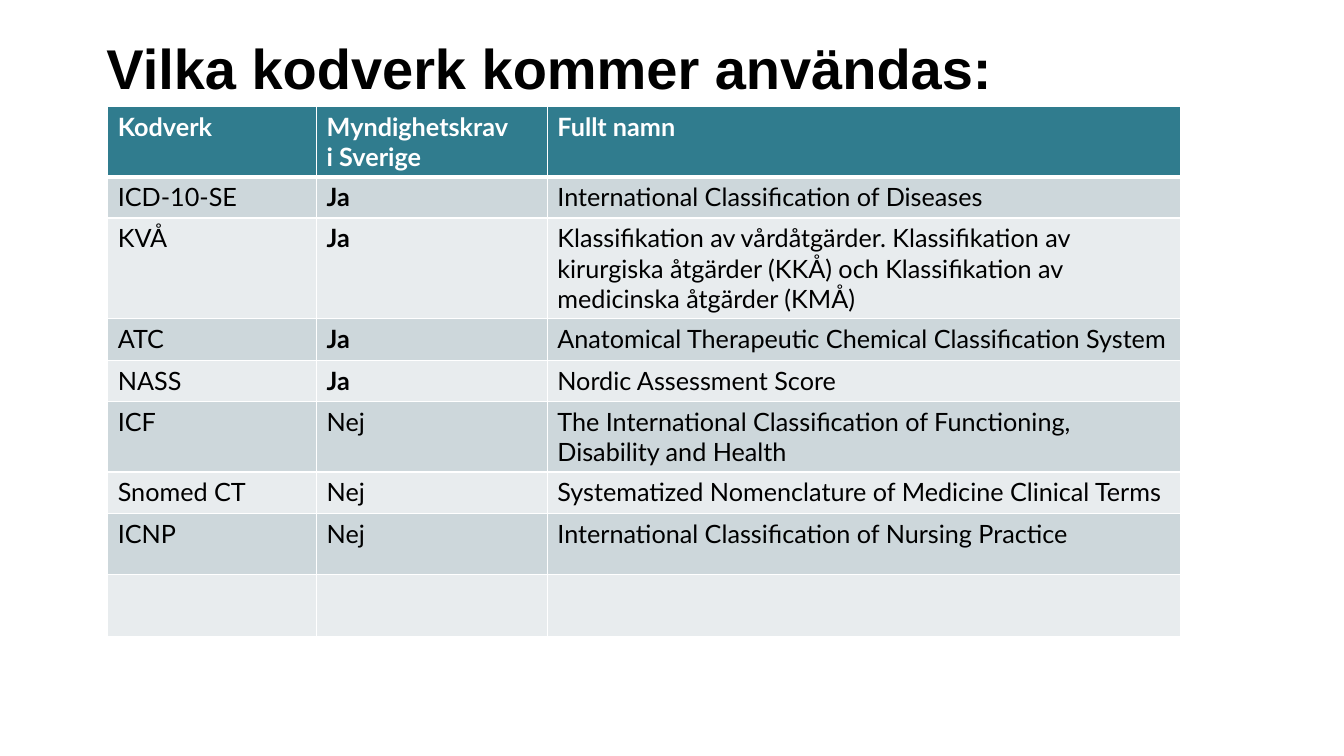
from lxml import etree
from pptx import Presentation
from pptx.dml.color import RGBColor
from pptx.enum import text
from pptx.oxml import ns
from pptx.util import Pt

HEADER = ["Kodverk", "Myndighetskrav \ni Sverige", "Fullt namn"]
CODES = [
    ("ICD-10-SE", "Ja", "International Classification of Diseases"),
    ("KVÅ", "Ja", "Klassifikation av vårdåtgärder. Klassifikation av kirurgiska "
                  "åtgärder (KKÅ) och Klassifikation av medicinska åtgärder (KMÅ)"),
    ("ATC", "Ja", "Anatomical Therapeutic Chemical Classification System"),
    ("NASS", "Ja", "Nordic Assessment Score"),
    ("ICF", "Nej", "The International Classification of Functioning, "
                   "Disability and Health"),
    ("Snomed CT", "Nej", "Systematized Nomenclature of Medicine Clinical Terms"),
    ("ICNP", "Nej", "International Classification of Nursing Practice"),
    ("", "", ""),
]
COL_WIDTHS = [149.2, 164.8, 452.2]
ROW_HEIGHTS = [45.5, 29.5, 45.5, 29.5, 29.5, 45.5, 29.5, 44, 44]


def color(value):
    return RGBColor.from_string(value)


def write(tf, content, fill, **fmt):
    """Fill the frame with one paragraph per line, each in the given format."""
    for i, line in enumerate(content.split("\n")):
        p = tf.paragraphs[0] if i == 0 else tf.add_paragraph()
        if line:
            r = p.add_run()
            r.text = line
            for name, value in fmt.items():
                setattr(r.font, name, value)
            r.font.color.rgb = color(fill)


def add_borders(cell, bottom):
    """Draw white cell borders, with the bottom one of the given width."""
    pr = cell._tc.get_or_add_tcPr()
    widths = {"a:lnL": 1, "a:lnR": 1, "a:lnT": 1, "a:lnB": bottom}
    for i, (tag, width) in enumerate(widths.items()):
        ln = etree.Element(ns.qn(tag), w=str(Pt(width)))
        fill = etree.SubElement(ln, ns.qn("a:solidFill"))
        etree.SubElement(fill, ns.qn("a:srgbClr"), val="FFFFFF")
        pr.insert(i, ln)


def add_title(s, x, y, w, h):
    tf = s.shapes.add_textbox(Pt(x), Pt(y), Pt(w), Pt(h)).text_frame
    tf.word_wrap = True
    tf.vertical_anchor = text.MSO_ANCHOR.BOTTOM
    write(tf, "Vilka kodverk kommer användas:", "000000",
          name="Arial", size=Pt(40), bold=True)
    tf.paragraphs[0].line_spacing = 1.1


def add_code_table(s, x, y):
    rows = [HEADER, *CODES]
    table = s.shapes.add_table(len(rows), len(HEADER), Pt(x), Pt(y),
                               Pt(sum(COL_WIDTHS)), Pt(sum(ROW_HEIGHTS))).table
    for col, width in zip(table.columns, COL_WIDTHS):
        col.width = Pt(width)
    for i, (row, height) in enumerate(zip(rows, ROW_HEIGHTS)):
        table.rows[i].height = Pt(height)
        header = i == 0
        band = "307C8E" if header else "CDD7DB" if i % 2 else "E8ECEE"
        for j, content in enumerate(row):
            cell = table.cell(i, j)
            cell.fill.solid()
            cell.fill.fore_color.rgb = color(band)
            add_borders(cell, 3 if header else 1)
            write(cell.text_frame, content, "FFFFFF" if header else "000000",
                  name="Lato", size=Pt(18), bold=header or content == "Ja")


def main():
    prs = Presentation()
    prs.slide_width, prs.slide_height = Pt(960), Pt(540)
    s = prs.slides.add_slide(prs.slide_layouts[6])
    add_title(s, 69, 13.7, 822, 62)
    add_code_table(s, 77, 75.8)
    prs.save("out.pptx")


if __name__ == "__main__":
    main()
